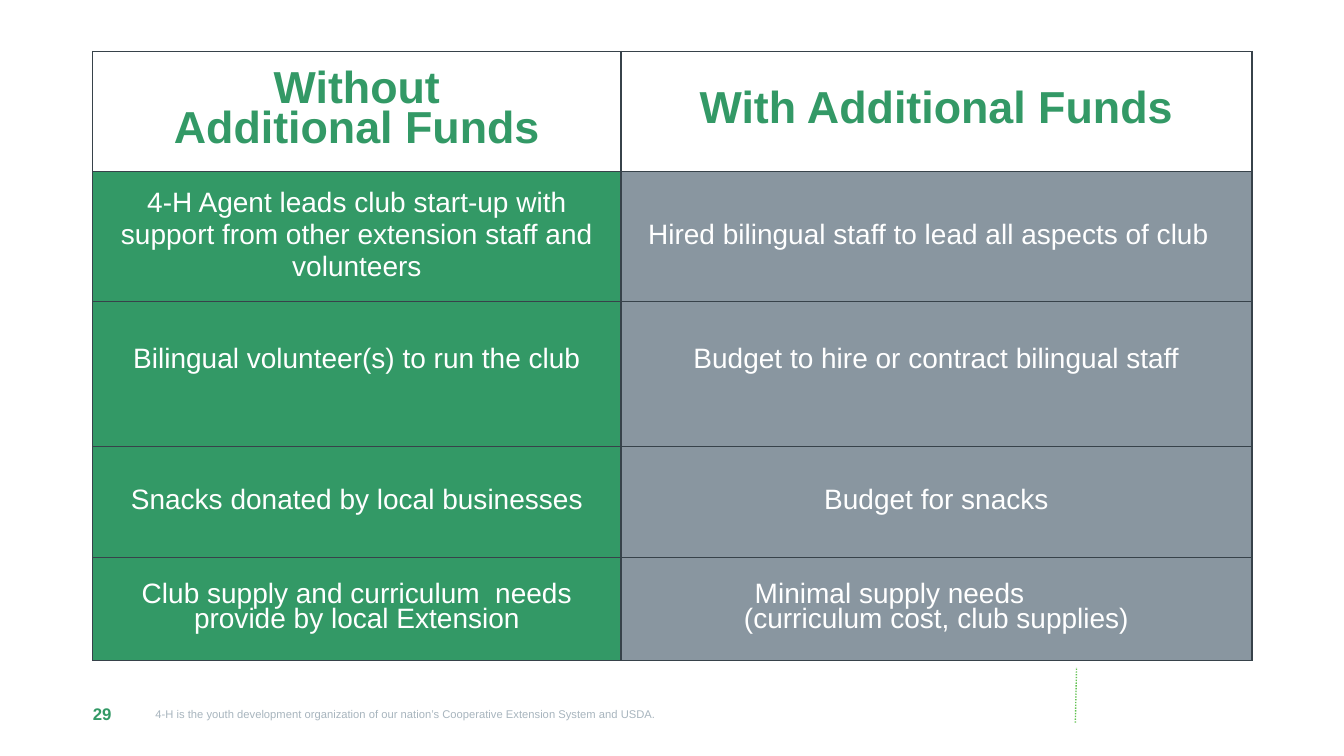
from dataclasses import dataclass

from lxml.etree import SubElement
from pptx import Presentation
from pptx.dml.color import RGBColor
from pptx.enum.dml import MSO_LINE
from pptx.enum.shapes import MSO_CONNECTOR
from pptx.enum.text import MSO_ANCHOR as Anchor, PP_ALIGN as Align
from pptx.oxml import parse_xml
from pptx.oxml.ns import nsdecls, qn
from pptx.slide import Slide
from pptx.table import _Cell as Cell
from pptx.text.text import TextFrame
from pptx.util import Cm, Pt

GREEN = RGBColor(0x33, 0x99, 0x66)
LIGHT_GREEN = RGBColor(0x61, 0xC2, 0x50)
GRAY = RGBColor(0x89, 0x96, 0xA0)
FOOTER_GRAY = RGBColor(0xA8, 0xB5, 0xBE)
BORDER = RGBColor(0x37, 0x42, 0x4A)
WHITE = RGBColor(0xFF, 0xFF, 0xFF)

COLUMN_WIDTHS = (13.31, 15.9)
COLUMN_FILLS = (GREEN, GRAY)


@dataclass(frozen=True)
class Entry:
    lines: tuple[str, ...]
    space_before: float = 0
    extra_right: float = 0
    first_indent: float = 0


@dataclass(frozen=True)
class FundingRow:
    height: float
    without_funds: Entry
    with_funds: Entry
    extra_bottom: float = 0
    is_header: bool = False


FUNDING_ROWS = (
    FundingRow(3.02, Entry(("Without\vAdditional Funds",)),
               Entry(("With Additional Funds",)), is_header=True),
    FundingRow(3.28,
               Entry(("4-H Agent leads club start-up with",
                      "support from other extension staff and",
                      "volunteers"), space_before=5),
               Entry(("Hired bilingual staff to lead all aspects of club",),
                     extra_right=0.4)),
    FundingRow(3.66, Entry(("Bilingual volunteer(s) to run the club",)),
               Entry(("Budget to hire or contract bilingual staff",)),
               extra_bottom=0.66),
    FundingRow(2.79, Entry(("Snacks donated by local businesses",)),
               Entry(("Budget for snacks",))),
    FundingRow(2.59,
               Entry(("Club supply and curriculum  needs",
                      "provide by local Extension")),
               Entry(("Minimal supply needs",
                      "(curriculum cost, club supplies)"), first_indent=3.07)),
)


def write_text(frame: TextFrame, lines: tuple[str, ...], *, size: float,
               color: RGBColor, bold: bool = False,
               align: Align = Align.LEFT, line_spacing: float = 1.0,
               space_before: float = 0, first_indent: float = 0) -> None:
    for index, line in enumerate(lines):
        paragraph = frame.add_paragraph() if index else frame.paragraphs[0]
        paragraph.text = line
        paragraph.alignment = align
        paragraph.line_spacing = line_spacing
        paragraph.space_before = Pt(space_before if index else 0)
        if first_indent and index == 0:
            paragraph.alignment = Align.LEFT
            paragraph._p.get_or_add_pPr().set("marL", str(Cm(first_indent)))
        for run in paragraph.runs:
            run.font.name = "Arial"
            run.font.size = Pt(size)
            run.font.bold = bold
            run.font.color.rgb = color


def set_borders(cell: Cell) -> None:
    properties = cell._tc.get_or_add_tcPr()
    for index, side in enumerate(("lnL", "lnR", "lnT", "lnB")):
        properties.insert(index, parse_xml(
            f'<a:{side} {nsdecls("a")} w="{Pt(1)}"><a:solidFill>'
            f'<a:srgbClr val="{BORDER}"/></a:solidFill></a:{side}>'))


def fill_cell(cell: Cell, entry: Entry, row: FundingRow, fill: RGBColor) -> None:
    cell.vertical_anchor = Anchor.MIDDLE
    cell.margin_left = Cm(0.3)
    cell.margin_right = Cm(0.3 + entry.extra_right)
    cell.margin_top = Cm(0.2)
    cell.margin_bottom = Cm(0.2 + row.extra_bottom)
    if row.is_header:
        cell.fill.background()
    else:
        cell.fill.solid()
        cell.fill.fore_color.rgb = fill
    set_borders(cell)
    write_text(cell.text_frame, entry.lines,
               size=32 if row.is_header else 20,
               color=GREEN if row.is_header else WHITE,
               bold=row.is_header, align=Align.CENTER, line_spacing=0.8,
               space_before=entry.space_before,
               first_indent=entry.first_indent)


def add_funding_table(slide: Slide) -> None:
    table = slide.shapes.add_table(
        len(FUNDING_ROWS), len(COLUMN_WIDTHS), Cm(2.34), Cm(1.3),
        Cm(sum(COLUMN_WIDTHS)), Cm(sum(row.height for row in FUNDING_ROWS))).table
    table.first_row = False
    table.horz_banding = False
    for column, width in zip(table.columns, COLUMN_WIDTHS):
        column.width = Cm(width)
    for row_index, row in enumerate(FUNDING_ROWS):
        table.rows[row_index].height = Cm(row.height)
        entries = (row.without_funds, row.with_funds)
        for column_index, (entry, fill) in enumerate(zip(entries, COLUMN_FILLS)):
            fill_cell(table.cell(row_index, column_index), entry, row, fill)


def add_footer_text(slide: Slide, text: str, left: float, width: float, *,
                    margin_right: float, size: float, color: RGBColor,
                    bold: bool = False, align: Align = Align.LEFT) -> None:
    box = slide.shapes.add_textbox(Cm(left), Cm(17.48), Cm(width), Cm(1.04))
    frame = box.text_frame
    frame.word_wrap = True
    frame.vertical_anchor = Anchor.MIDDLE
    frame.margin_left = 0
    frame.margin_right = Cm(margin_right)
    write_text(frame, (text,), size=size, color=color, bold=bold, align=align)


def add_footer_line(slide: Slide) -> None:
    connector = slide.shapes.add_connector(
        MSO_CONNECTOR.STRAIGHT, Cm(27.1), Cm(18.21), Cm(27.13), Cm(16.81))
    connector.line.color.rgb = LIGHT_GREEN
    connector.line.width = Pt(1)
    connector.line.dash_style = MSO_LINE.ROUND_DOT
    SubElement(connector._element.spPr, qn("a:effectLst"))


def main() -> None:
    presentation = Presentation()
    presentation.slide_width = Cm(33.87)
    presentation.slide_height = Cm(19.05)
    slide = presentation.slides.add_slide(presentation.slide_layouts[6])
    add_footer_text(
        slide,
        "4-H is the youth development organization of our nation’s "
        "Cooperative Extension System and USDA.",
        3.45, 13.34, margin_right=0.25, size=8, color=FOOTER_GRAY,
        align=Align.RIGHT)
    add_footer_line(slide)
    add_footer_text(slide, "29", 2.34, 1.09, margin_right=0, size=12,
                    color=GREEN, bold=True)
    add_funding_table(slide)
    presentation.save("out.pptx")


if __name__ == "__main__":
    main()
